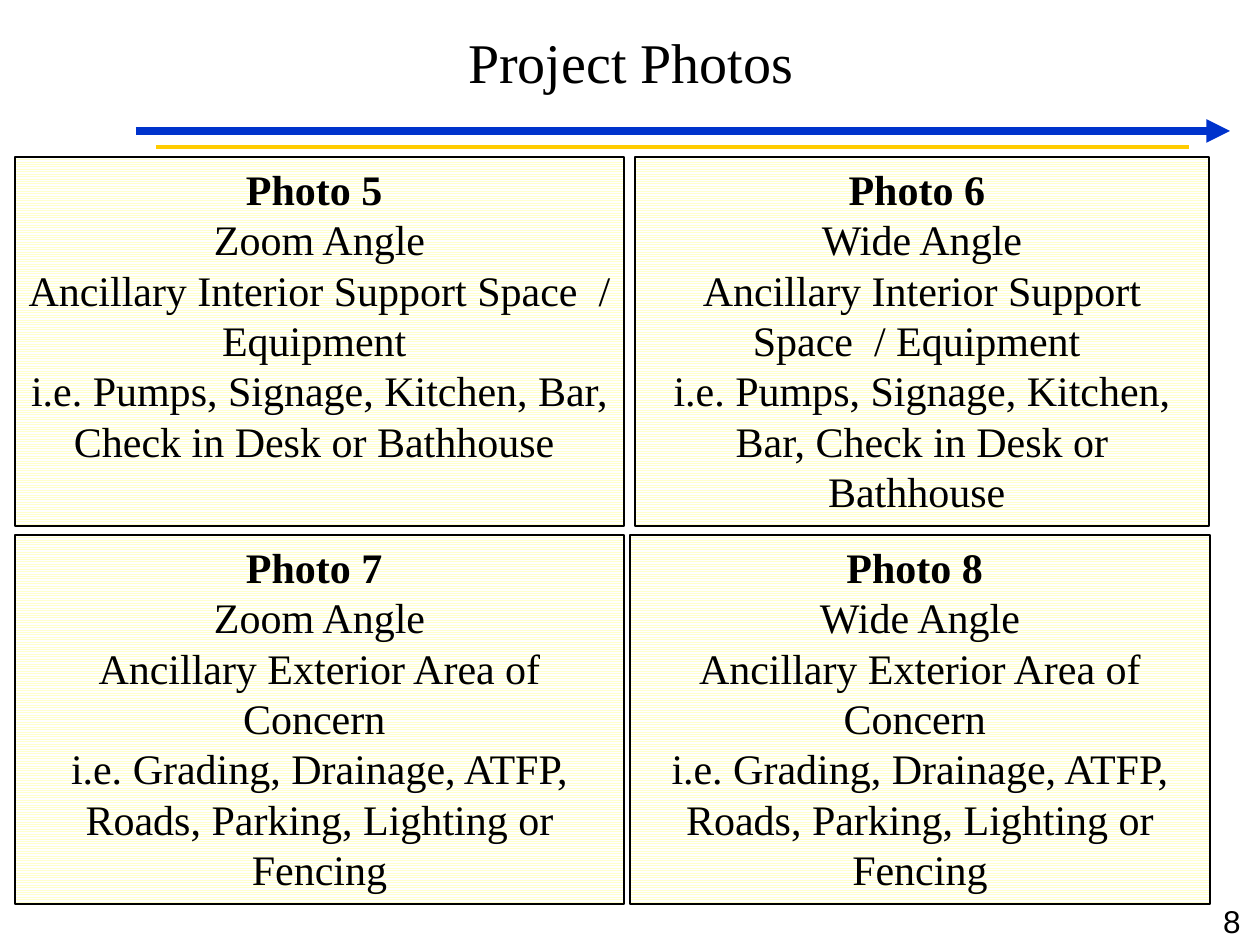
from lxml.etree import SubElement
from pptx import Presentation
from pptx.dml.color import RGBColor
from pptx.enum.dml import MSO_PATTERN
from pptx.enum.shapes import MSO_CONNECTOR, MSO_SHAPE
from pptx.enum.text import MSO_ANCHOR, MSO_AUTO_SIZE, PP_ALIGN
from pptx.oxml.ns import qn
from pptx.util import Pt

PX = 914400 / 126
COLORS = {
    "black": "000000",
    "white": "FFFFFF",
    "cream": "FFFFCC",
    "blue": "0033CC",
    "gold": "FFCC00",
}
SERIF = "Times New Roman"

INTERIOR = [
    "Ancillary Interior Support Space  / Equipment ",
    "i.e. Pumps, Signage, Kitchen, Bar, Check in Desk or Bathhouse ",
]
EXTERIOR = [
    "Ancillary Exterior Area of Concern ",
    "i.e. Grading, Drainage, ATFP, Roads, Parking, Lighting or Fencing",
]
TOP_ROW, BOTTOM_ROW = 157, 535
PANEL_HEIGHT = 369
# number, left, top, width, angle, subject
PANELS = [
    (5, 15, TOP_ROW, 609, "Zoom Angle", INTERIOR),
    (8, 630, BOTTOM_ROW, 580, "Wide Angle", EXTERIOR),
    (7, 15, BOTTOM_ROW, 609, "Zoom Angle", EXTERIOR),
    (6, 635, TOP_ROW, 574, "Wide Angle", INTERIOR),
]


def emu(*lengths):
    return [round(length * PX) for length in lengths]


def rgb(name):
    return RGBColor.from_string(COLORS[name])


def write(shape, lines, size, font=SERIF, align=PP_ALIGN.CENTER, wrap=True,
          anchor=MSO_ANCHOR.TOP, grow=True, bold_first=False):
    """Put one paragraph per line into the shape."""
    frame = shape.text_frame
    frame.word_wrap = wrap
    frame.vertical_anchor = anchor
    frame.auto_size = MSO_AUTO_SIZE.SHAPE_TO_FIT_TEXT if grow else MSO_AUTO_SIZE.NONE
    for index, line in enumerate(lines):
        paragraph = frame.add_paragraph() if index else frame.paragraphs[0]
        paragraph.alignment = align
        run = paragraph.add_run()
        run.text = line
        run.font.name = font
        run.font.size = Pt(size)
        run.font.bold = bold_first and index == 0
        run.font.color.rgb = rgb("black")


def add_rule(slide, left, right, y, color, weight, arrow=False):
    rule = slide.shapes.add_connector(MSO_CONNECTOR.STRAIGHT, *emu(left, y, right, y))
    rule.line.color.rgb = rgb(color)
    rule.line.width = Pt(weight)
    if arrow:
        SubElement(rule.line._get_or_add_ln(), qn("a:tailEnd"), type="triangle")
    SubElement(rule._element.spPr, qn("a:effectLst"))


def add_box(slide, left, top, width, height):
    box = slide.shapes.add_shape(MSO_SHAPE.RECTANGLE, *emu(left, top, width, height))
    box.shadow.inherit = False
    return box


def add_panel(slide, number, left, top, width, angle, subject):
    panel = add_box(slide, left, top, width, PANEL_HEIGHT)
    panel.fill.patterned()
    panel.fill.pattern = MSO_PATTERN.LIGHT_HORIZONTAL
    panel.fill.fore_color.rgb = rgb("cream")
    panel.fill.back_color.rgb = rgb("white")
    panel.line.color.rgb = rgb("black")
    panel.line.width = Pt(0.75)
    write(panel, [f"Photo {number} ", angle, *subject], size=24, bold_first=True)


def add_page_number(slide, number):
    box = add_box(slide, 1210, 900, 43, 42)
    box.fill.solid()
    box.fill.fore_color.rgb = rgb("white")
    box.line.fill.background()
    write(box, [number], size=18, font="Arial", align=PP_ALIGN.RIGHT, wrap=False,
          anchor=MSO_ANCHOR.MIDDLE, grow=False)


def main():
    deck = Presentation()
    deck.slide_width, deck.slide_height = emu(1260, 945)
    slide = deck.slides.add_slide(deck.slide_layouts[6])

    add_rule(slide, 136, 1230, 131, "blue", 4.5, arrow=True)
    add_rule(slide, 156, 1189, 147, "gold", 2.25)
    add_page_number(slide, "8")
    title = slide.shapes.add_textbox(*emu(454, 21, 354, 81))
    write(title, ["Project Photos"], size=32, wrap=False)
    for panel in PANELS:
        add_panel(slide, *panel)

    deck.save("out.pptx")


if __name__ == "__main__":
    main()
